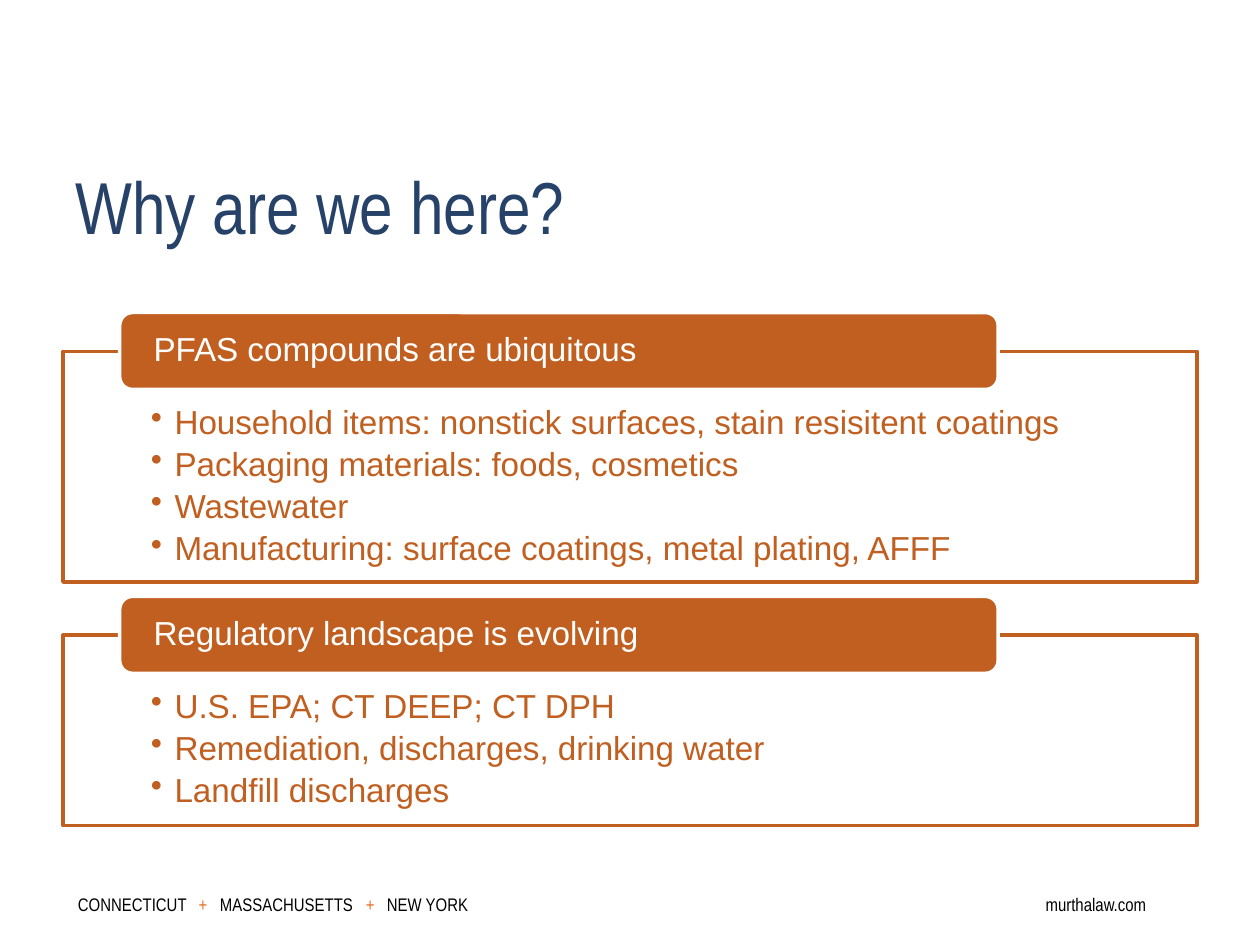
from dataclasses import dataclass

from lxml.etree import SubElement
from pptx import Presentation
from pptx.dml.color import RGBColor
from pptx.enum.shapes import MSO_SHAPE
from pptx.enum.text import MSO_ANCHOR, PP_ALIGN
from pptx.oxml.ns import qn
from pptx.util import Pt

COLORS = {"navy": "274268", "rust": "C15F20", "orange": "E86C1F",
          "black": "000000", "white": "FFFFFF"}

PANEL_LEFT, PANEL_WIDTH = 36, 648
PANEL_BASE, ITEM_HEIGHT = 39.4, 23.1
HEADER_LEFT, HEADER_WIDTH, HEADER_HEIGHT = 68.4, 502, 44
HEADER_RISE = 22.2
PANEL_GAP = 30.4


@dataclass
class Section:
    heading: str
    items: list[str]

    @property
    def height(self) -> float:
        return PANEL_BASE + ITEM_HEIGHT * len(self.items)


SECTIONS = [
    Section("PFAS compounds are ubiquitous", [
        "Household items: nonstick surfaces, stain resisitent coatings",
        "Packaging materials: foods, cosmetics",
        "Wastewater",
        "Manufacturing: surface coatings, metal plating, AFFF"]),
    Section("Regulatory landscape is evolving", [
        "U.S. EPA; CT DEEP; CT DPH",
        "Remediation, discharges, drinking water",
        "Landfill discharges"]),
]

# Footer text, colour and tab position
FOOTER = [("CONNECTICUT", "black", 0), ("+", "orange", 69),
          ("MASSACHUSETTS", "black", 81.2), ("+", "orange", 164.6),
          ("NEW YORK", "black", 176.6), ("murthalaw.com", "black", 553)]


def rgb(name: str) -> RGBColor:
    return RGBColor.from_string(COLORS[name])


def style(r, size: float, font: str, color: str) -> None:
    r.font.size = Pt(size)
    r.font.name = font
    r.font.color.rgb = rgb(color)


def set_margins(tf, left: float, top: float, right: float, bottom: float) -> None:
    tf.word_wrap = True
    tf.margin_left, tf.margin_top = Pt(left), Pt(top)
    tf.margin_right, tf.margin_bottom = Pt(right), Pt(bottom)


def add_box(s, kind, left: float, top: float, width: float, height: float,
            fill: str, line: str):
    sp = s.shapes.add_shape(kind, Pt(left), Pt(top), Pt(width), Pt(height))
    sp.shadow.inherit = False
    sp.fill.solid()
    sp.fill.fore_color.rgb = rgb(fill)
    sp.line.color.rgb = rgb(line)
    sp.line.width = Pt(2)
    return sp


def add_bullet(p) -> None:
    pPr = p._p.get_or_add_pPr()
    pPr.set("marL", str(Pt(13.5)))
    pPr.set("indent", str(-Pt(13.5)))
    SubElement(pPr, qn("a:buChar")).set("char", "•")


def add_section(s, section: Section, top: float) -> None:
    # Outlined panel with bullets
    sp = add_box(s, MSO_SHAPE.RECTANGLE, PANEL_LEFT, top, PANEL_WIDTH,
                 section.height, "white", "rust")
    tf = sp.text_frame
    tf.text = "\n".join(section.items)
    tf.vertical_anchor = MSO_ANCHOR.TOP
    set_margins(tf, 50.3, 31, 50.3, 10.8)
    for p in tf.paragraphs:
        add_bullet(p)
        p.alignment = PP_ALIGN.LEFT
        p.line_spacing = 0.9
        p.space_after = Pt(3.6)
        style(p.runs[0], 19, "Arial", "rust")

    # Rounded header over the panel's top edge
    sp = add_box(s, MSO_SHAPE.ROUNDED_RECTANGLE, HEADER_LEFT, top - HEADER_RISE,
                 HEADER_WIDTH, HEADER_HEIGHT, "rust", "white")
    tf = sp.text_frame
    tf.text = section.heading
    tf.vertical_anchor = MSO_ANCHOR.MIDDLE
    set_margins(tf, 17.2, 0, 17.2, 0)
    p = tf.paragraphs[0]
    p.alignment = PP_ALIGN.LEFT
    p.line_spacing = 0.9
    style(p.runs[0], 19, "Arial", "white")


def add_title(s, text: str) -> None:
    tf = s.shapes.add_textbox(Pt(36), Pt(72), Pt(522), Pt(90)).text_frame
    tf.text = text
    tf.word_wrap = True
    tf.vertical_anchor = MSO_ANCHOR.MIDDLE
    style(tf.paragraphs[0].runs[0], 42, "Arial Narrow", "navy")


def add_footer(s) -> None:
    tf = s.shapes.add_textbox(Pt(37.4), Pt(504.7), Pt(682.6), Pt(28.8)).text_frame
    tf.word_wrap = True
    p = tf.paragraphs[0]
    tabs = SubElement(p._p.get_or_add_pPr(), qn("a:tabLst"))
    for text, color, pos in FOOTER:
        if pos:
            tab = SubElement(tabs, qn("a:tab"))
            tab.set("pos", str(Pt(pos)))
            tab.set("algn", "l")
        r = p.add_run()
        r.text = "\t" + text if pos else text
        style(r, 18, "Arial Narrow", color)
        r.font._element.set("baseline", "30000")  # raised small text


def main() -> None:
    prs = Presentation()
    prs.slide_width, prs.slide_height = Pt(720), Pt(540)
    s = prs.slides.add_slide(prs.slide_layouts[6])
    add_footer(s)
    add_title(s, "Why are we here?")
    top = 200.8
    for section in SECTIONS:
        add_section(s, section, top)
        top += section.height + PANEL_GAP
    prs.save("out.pptx")


if __name__ == "__main__":
    main()
